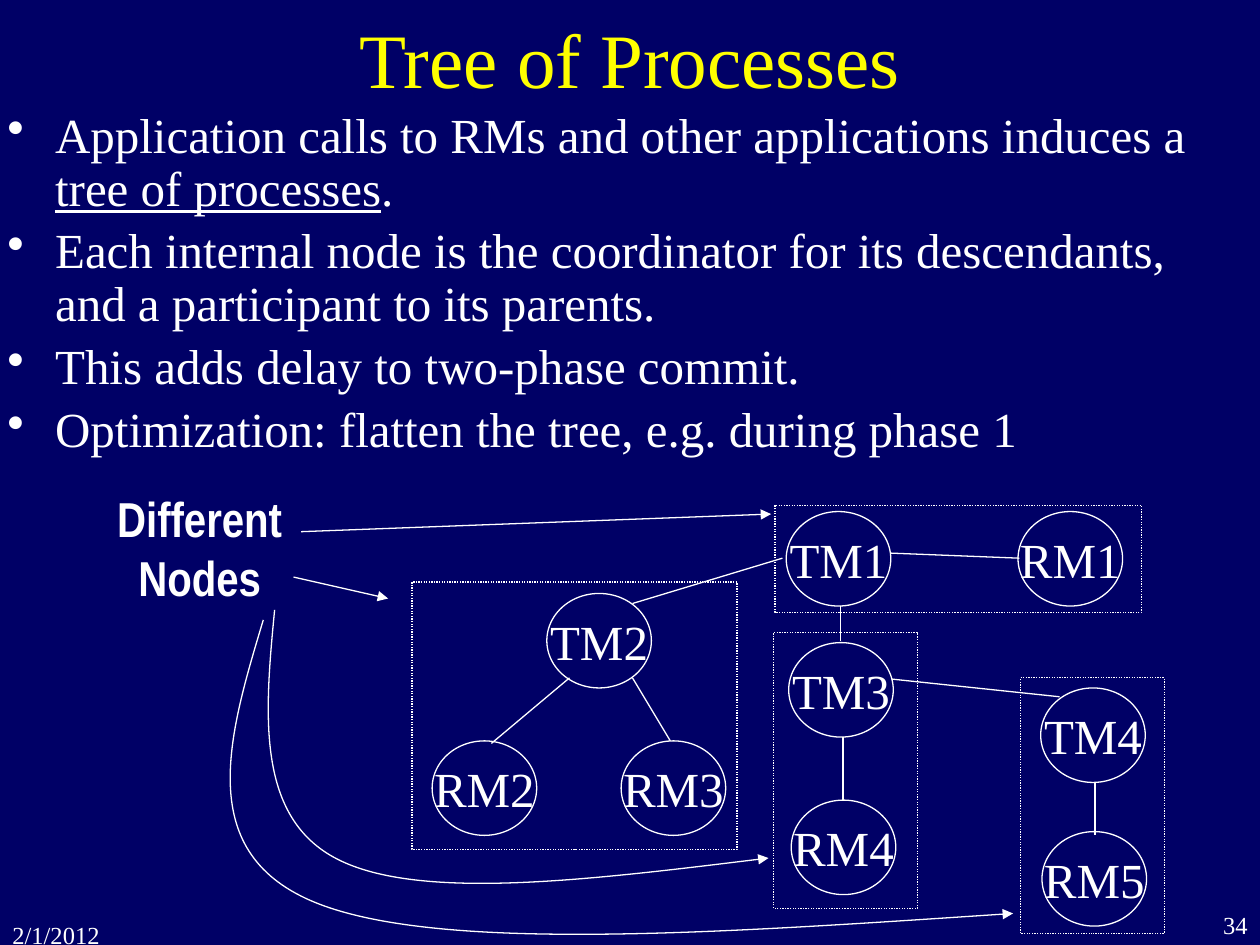
from dataclasses import dataclass

from lxml import etree
from pptx import Presentation
from pptx import util as u
from pptx.dml.color import RGBColor
from pptx.enum import dml, shapes, text
from pptx.oxml.ns import qn


@dataclass(frozen=True)
class Theme:
    """Colours, fonts and type sizes of the slide."""
    ground: str = "000066"
    ink: str = "FFFFFF"
    heading: str = "FFFF00"
    serif: str = "Times New Roman"
    narrow: str = "Arial Narrow"
    title_size: int = 44
    body_size: int = 28
    footer_size: int = 14
    stroke: float = 0.75


THEME = Theme()
WIDTH, HEIGHT = u.Inches(10), u.Inches(7.5)
COLUMNS, ROWS = 100, 75
NODE_SIZE = (8.3, 7.5)

BULLETS = [
    [("Application calls to RMs and other applications induces a ", False),
     ("tree of processes", True), (".", False)],
    [("Each internal node is the coordinator for its descendants, "
      "and a participant to its parents.", False)],
    [("This adds delay to two-phase commit.", False)],
    [("Optimization: flatten the tree, e.g. during phase 1", False)],
]
PROCESSES = {
    "TM1": (62.4, 40.6), "TM2": (43.4, 47.1), "TM3": (62.6, 51), "TM4": (82.6, 54.6),
    "RM1": (80.8, 40.6), "RM2": (34.3, 58.8), "RM3": (49.3, 58.8),
    "RM4": (62.8, 63.5), "RM5": (82.7, 66),
}
CALLS = [
    ((62.1, 44.3), (50.2, 47.9)), ((66.7, 48.1), (66.7, 50.9)),
    ((70.7, 43.9), (80.9, 44.3)), ((45.2, 53.8), (39, 59)),
    ((50.2, 53.8), (53.2, 58.8)), ((66.9, 58.5), (66.9, 63.5)),
    ((70.8, 53.9), (84.1, 55.3)), ((86.9, 62.1), (86.9, 66.3)),
]
MACHINES = [
    (81, 53.8, 11.4, 20.3), (61.4, 50.2, 11.4, 21.9),
    (32.7, 46.2, 25.8, 21.2), (61.5, 40.1, 29.1, 8.5),
]
POINTERS = [((23.9, 42.2), (61.2, 40.8)), ((23.3, 45.8), (30.8, 47.5))]
CURVED_POINTERS = [
    [(20.9, 49.2), (18.1, 58.5), (15.3, 67.8), (25.2, 71.7),
     (35.1, 75.6), (57.7, 74), (80.4, 72.5)],
    [(21.8, 48.4), (21, 56.7), (20.3, 64.9), (26.8, 68.2),
     (33.3, 71.5), (47.1, 69.8), (61, 68.1)],
]


def place(column, row):
    """Turn grid columns and rows into slide lengths."""
    return int(WIDTH * column / COLUMNS), int(HEIGHT * row / ROWS)


def add_run(paragraph, words, size=THEME.body_size, color=THEME.ink,
            font=THEME.serif, bold=False, underline=False):
    """Add one formatted run to a paragraph."""
    run = paragraph.add_run()
    run.text = words
    run.font.size, run.font.name = u.Pt(size), font
    run.font.bold, run.font.underline = bold, underline
    run.font.color.rgb = RGBColor.from_string(color)


def add_text(slide, corner, extent, lines, align, wrap=True, **style):
    """Add a text box with one paragraph per line."""
    frame = slide.shapes.add_textbox(*place(*corner), *place(*extent)).text_frame
    frame.word_wrap = wrap
    for index, words in enumerate(lines):
        paragraph = frame.add_paragraph() if index else frame.paragraphs[0]
        paragraph.alignment = align
        add_run(paragraph, words, **style)


def add_title(slide, words):
    """Move the title placeholder and fill it."""
    title = slide.shapes.title
    title.left, title.top = place(7.5, 1.7)
    title.width, title.height = place(85, 5.8)
    frame = title.text_frame
    frame.vertical_anchor = text.MSO_ANCHOR.MIDDLE
    frame.auto_size = text.MSO_AUTO_SIZE.NONE
    frame.paragraphs[0].alignment = text.PP_ALIGN.CENTER
    add_run(frame.paragraphs[0], words, THEME.title_size, THEME.heading)


def add_bullets(slide, items):
    """Add the bulleted statements."""
    frame = slide.shapes.add_textbox(*place(-0.4, 8.3), *place(100, 25.8)).text_frame
    frame.word_wrap = True
    for index, runs in enumerate(items):
        paragraph = frame.add_paragraph() if index else frame.paragraphs[0]
        paragraph.line_spacing = 0.9
        properties = paragraph._p.get_or_add_pPr()
        indent = u.Inches(0.38)
        properties.set("marL", str(int(indent)))
        properties.set("indent", str(-int(indent)))
        before = etree.SubElement(properties, qn("a:spcBef"))
        etree.SubElement(before, qn("a:spcPct")).set("val", "20000")
        etree.SubElement(properties, qn("a:buChar")).set("char", "•")
        for words, underline in runs:
            add_run(paragraph, words, underline=underline)


def draw_line(line, arrow=False):
    """Format an outline, with an arrowhead on request."""
    line.color.rgb = RGBColor.from_string(THEME.ink)
    line.width = u.Pt(THEME.stroke)
    if arrow:
        etree.SubElement(line._get_or_add_ln(), qn("a:tailEnd")).set("type", "triangle")


def add_outline(slide, preset, corner, extent):
    """Add an unfilled preset shape."""
    outline = slide.shapes.add_shape(preset, *place(*corner), *place(*extent))
    outline.shadow.inherit = False
    outline.fill.background()
    draw_line(outline.line)
    return outline


def add_process(slide, name, corner):
    """Add a named process node."""
    node = add_outline(slide, shapes.MSO_SHAPE.OVAL, corner, NODE_SIZE)
    frame = node.text_frame
    frame.word_wrap = False
    frame.vertical_anchor = text.MSO_ANCHOR.MIDDLE
    frame.paragraphs[0].alignment = text.PP_ALIGN.CENTER
    add_run(frame.paragraphs[0], name)


def add_link(slide, start, end, arrow=False):
    """Add a straight connector."""
    link = slide.shapes.add_connector(
        shapes.MSO_CONNECTOR.STRAIGHT, *place(*start), *place(*end))
    draw_line(link.line, arrow)
    etree.SubElement(link._element.spPr, qn("a:effectLst"))


def add_curve(slide, points):
    """Add an open arrow of cubic segments through every third point."""
    start, *rest = [place(*point) for point in points]
    builder = slide.shapes.build_freeform(*start)
    builder.add_line_segments(rest, close=False)
    curve = builder.convert_to_shape()
    curve.shadow.inherit = False
    curve.fill.background()
    draw_line(curve.line, arrow=True)
    steps = list(curve._element.iter(qn("a:lnTo")))
    outline = steps[0].getparent()
    for first in range(0, len(steps), 3):
        segment = etree.SubElement(outline, qn("a:cubicBezTo"))
        for step in steps[first:first + 3]:
            segment.append(step[0])
            outline.remove(step)


def main():
    """Build and save the slide."""
    deck = Presentation()
    deck.slide_width, deck.slide_height = WIDTH, HEIGHT
    slide = deck.slides.add_slide(deck.slide_layouts[5])
    slide.background.fill.solid()
    slide.background.fill.fore_color.rgb = RGBColor.from_string(THEME.ground)
    align = text.PP_ALIGN
    add_text(slide, (0, 72.5), (10, 2.5), ["2/1/2012"], align.LEFT, size=THEME.footer_size)
    add_text(slide, (90.8, 71.7), (9.2, 3.3), ["34"], align.RIGHT, size=THEME.footer_size)
    add_title(slide, "Tree of Processes")
    add_bullets(slide, BULLETS)
    for name, corner in PROCESSES.items():
        add_process(slide, name, corner)
    for start, end in CALLS:
        add_link(slide, start, end)
    for left, top, width, height in MACHINES:
        machine = add_outline(slide, shapes.MSO_SHAPE.RECTANGLE, (left, top), (width, height))
        machine.line.dash_style = dml.MSO_LINE.ROUND_DOT
    add_text(slide, (8.3, 38.3), (15.1, 10.3), ["Different", "Nodes"], align.CENTER,
             wrap=False, font=THEME.narrow, bold=True)
    for start, end in POINTERS:
        add_link(slide, start, end, arrow=True)
    for points in CURVED_POINTERS:
        add_curve(slide, points)
    deck.save("out.pptx")


if __name__ == "__main__":
    main()
